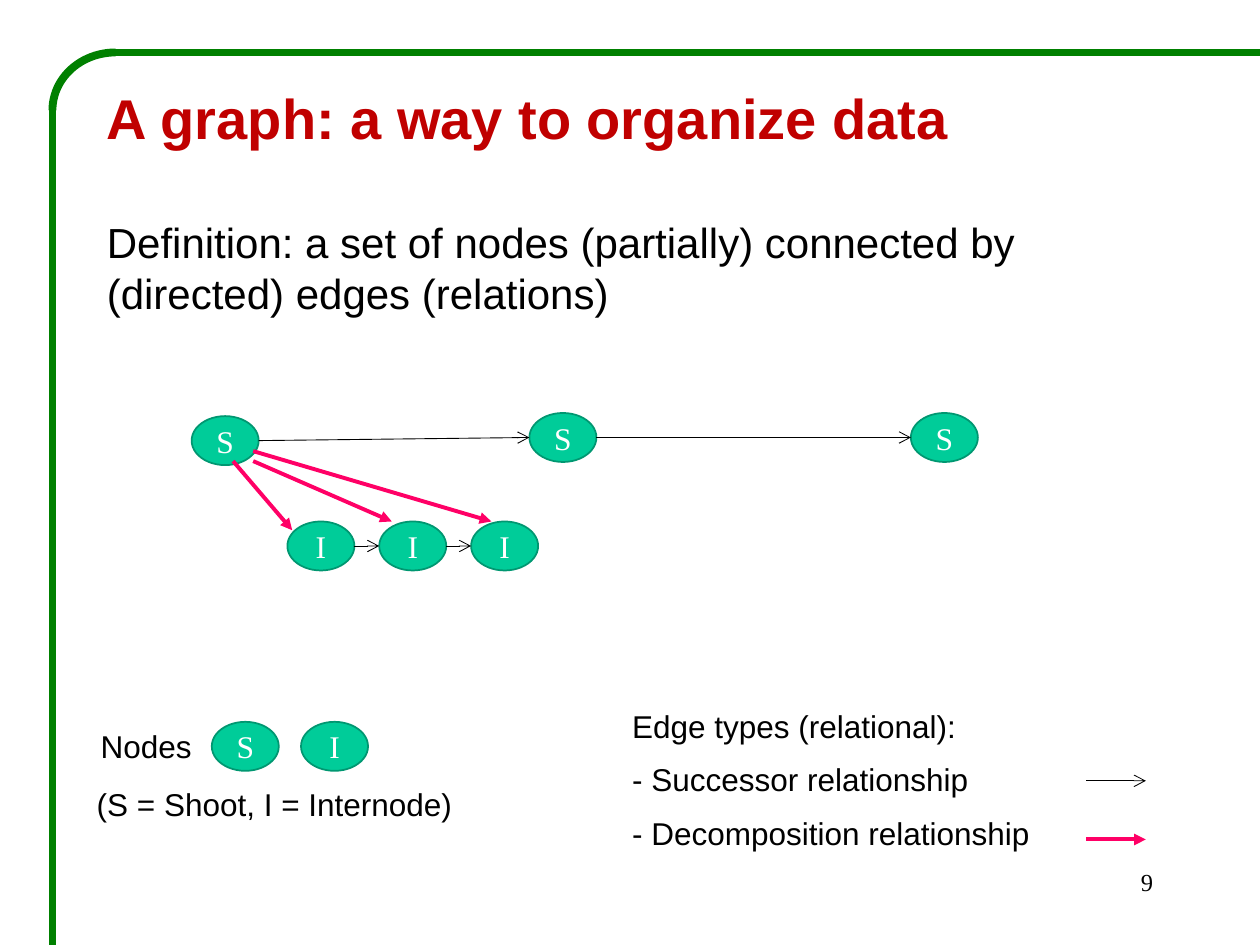
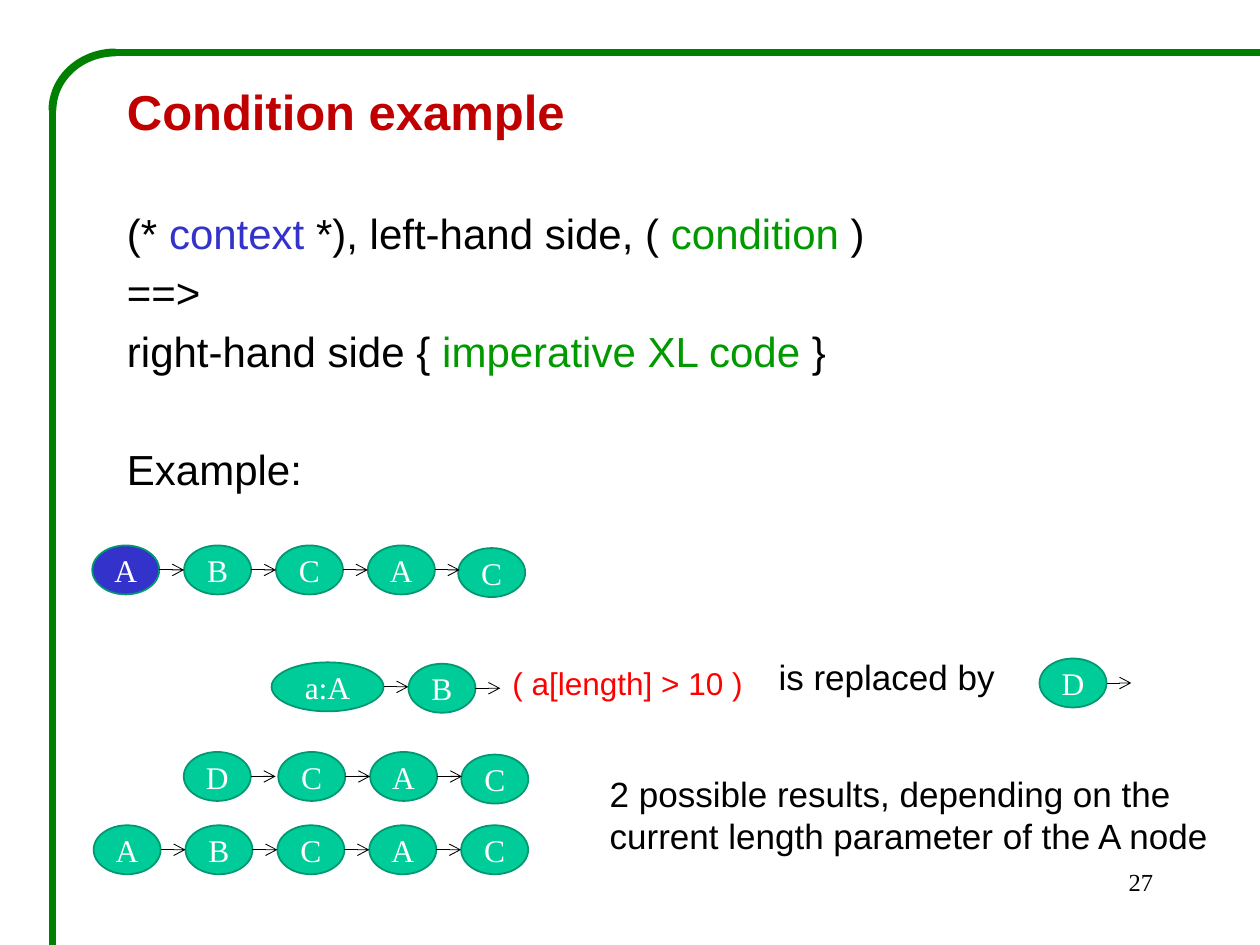
from dataclasses import dataclass
from typing import Optional, Sequence

from lxml.etree import SubElement
from pptx import Presentation
from pptx.dml.color import RGBColor
from pptx.enum.shapes import MSO_CONNECTOR as Link, MSO_SHAPE as Preset
from pptx.enum.text import MSO_ANCHOR as Anchor, PP_ALIGN as Align
from pptx.oxml.ns import qn
from pptx.util import Pt

SLIDE_WIDTH, SLIDE_HEIGHT = 720, 540
SANS, SERIF = "Arial", "Times New Roman"
BLACK, WHITE, RED = "000000", "FFFFFF", "FF0000"
TITLE_RED, FRAME_GREEN, CODE_GREEN = "C00000", "008000", "009900"
NODE_GREEN, NODE_EDGE, CONTEXT_BLUE = "00CC99", "009771", "3333CC"
DECOMPOSITION_PINK = "FF0066"
NODE_WIDTH, NODE_HEIGHT, NODE_PITCH = 38.3, 28, 52.5
ARROW_LENGTH = NODE_PITCH - NODE_WIDTH


@dataclass(frozen=True)
class Run:
    text: str
    size: float = 18
    color: str = BLACK
    bold: bool = False
    font: str = SANS


@dataclass(frozen=True)
class Para:
    runs: Sequence[Run]
    before: float = 0
    align: Align = Align.LEFT


@dataclass(frozen=True)
class Edge:
    color: str
    width: float
    head: Optional[str] = None


@dataclass(frozen=True)
class Node:
    label: str
    left: float
    top: float
    width: float = NODE_WIDTH
    fill: str = NODE_GREEN

    @property
    def entry(self) -> tuple[float, float]:
        return self.left, self.top + NODE_HEIGHT / 2

    @property
    def exit(self) -> tuple[float, float]:
        return self.left + self.width, self.top + NODE_HEIGHT / 2


FRAME = Edge(FRAME_GREEN, 4.5)
SUCCESSOR = Edge(BLACK, 0.5, "arrow")
DECOMPOSITION = Edge(DECOMPOSITION_PINK, 2.25, "triangle")


def rgb(color: str) -> RGBColor:
    return RGBColor.from_string(color)


def write(paragraph, text: str, *, size: float, color: str = BLACK,
          bold: bool = False, font: str = SANS) -> None:
    run = paragraph.add_run()
    run.text = text
    run.font.size = Pt(size)
    run.font.name = font
    run.font.bold = bold
    run.font.color.rgb = rgb(color)


def add_text(slide, left: float, top: float, width: float, height: float,
             paras: Sequence[Para], anchor: Anchor = Anchor.TOP) -> None:
    frame = slide.shapes.add_textbox(Pt(left), Pt(top), Pt(width), Pt(height)).text_frame
    frame.word_wrap = True
    frame.vertical_anchor = anchor
    for index, para in enumerate(paras):
        paragraph = frame.add_paragraph() if index else frame.paragraphs[0]
        paragraph.alignment = para.align
        paragraph.space_before = Pt(para.before)
        for run in para.runs:
            write(paragraph, run.text, size=run.size, color=run.color,
                  bold=run.bold, font=run.font)


def add_edge(slide, start: tuple[float, float], end: tuple[float, float], edge: Edge) -> None:
    connector = slide.shapes.add_connector(Link.STRAIGHT, *map(Pt, (*start, *end)))
    connector.line.color.rgb = rgb(edge.color)
    connector.line.width = Pt(edge.width)
    properties = connector.element.spPr
    if edge.head:
        SubElement(properties.find(qn("a:ln")), qn("a:tailEnd"), type=edge.head)
    SubElement(properties, qn("a:effectLst"))


def add_node(slide, node: Node) -> None:
    oval = slide.shapes.add_shape(Preset.OVAL, Pt(node.left), Pt(node.top),
                                  Pt(node.width), Pt(NODE_HEIGHT))
    oval.shadow.inherit = False
    oval.fill.solid()
    oval.fill.fore_color.rgb = rgb(node.fill)
    oval.line.color.rgb = rgb(NODE_EDGE)
    oval.line.width = Pt(1)
    frame = oval.text_frame
    frame.margin_left = frame.margin_right = frame.margin_top = frame.margin_bottom = 0
    frame.vertical_anchor = Anchor.MIDDLE
    frame.paragraphs[0].alignment = Align.CENTER
    write(frame.paragraphs[0], node.label, size=18, color=WHITE, font=SERIF)


def add_chain(slide, nodes: Sequence[Node], open_end: bool = False) -> None:
    """Draw nodes in a row with a short successor arrow after each, the last only if open_end."""
    for node in nodes:
        add_node(slide, node)
    for node in nodes if open_end else nodes[:-1]:
        x, y = node.exit
        add_edge(slide, (x, y), (x + ARROW_LENGTH, y), SUCCESSOR)


def row(labels: str, left: float, top: float) -> list[Node]:
    return [Node(label, left + i * NODE_PITCH, top) for i, label in enumerate(labels)]


def add_framed_slide(deck, number: int):
    slide = deck.slides.add_slide(deck.slide_layouts[6])
    edge, corner_x, corner_y = 30, 66, 63
    add_edge(slide, (SLIDE_WIDTH, edge), (corner_x, edge), FRAME)
    add_edge(slide, (edge, corner_y - 2), (edge, SLIDE_HEIGHT), FRAME)
    corner = slide.shapes.add_shape(Preset.ARC, Pt(edge), Pt(edge),
                                    Pt(2 * (corner_x - edge)), Pt(2 * (corner_y - edge)))
    corner.adjustments[0], corner.adjustments[1] = 108, 162
    corner.shadow.inherit = False
    corner.fill.background()
    corner.line.color.rgb = rgb(FRAME.color)
    corner.line.width = Pt(FRAME.width)
    add_text(slide, 516, 492, 150, 36,
             [Para([Run(str(number), 14, font=SERIF)], align=Align.RIGHT)])
    return slide


def build_graph_slide(deck) -> None:
    slide = add_framed_slide(deck, 9)
    definition = "Definition: a set of nodes (partially) connected by (directed) edges (relations)"
    add_text(slide, 54, 43.2, 640.8, 142.6, [
        Para([Run("A graph: a way to organize data", 32, TITLE_RED, True)]),
        Para([Run(definition, 24)], before=38),
    ], Anchor.MIDDLE)

    shoots = [Node("S", 109.5, 237.8), Node("S", 302.5, 236), Node("S", 520.5, 236)]
    for shoot in shoots:
        add_node(slide, shoot)
    for shoot, successor in zip(shoots, shoots[1:]):
        add_edge(slide, shoot.exit, successor.entry, SUCCESSOR)
    add_chain(slide, row("III", 164.2, 298))
    for start, end in [((133.2, 263.5), (167, 303)),
                       ((144.7, 263.5), (223.9, 298)),
                       ((144.7, 257.8), (280.8, 298))]:
        add_edge(slide, start, end, DECOMPOSITION)

    add_text(slide, 50.4, 412, 70, 28.8, [Para([Run("Nodes")])])
    for kind in (Node("S", 121, 412.5), Node("I", 172, 412.5)):
        add_node(slide, kind)
    add_text(slide, 48.2, 445, 260.6, 28.8, [Para([Run("(S = Shoot, I = Internode)")])])
    edge_legend = ("Edge types (relational):", "- Successor relationship",
                   "- Decomposition relationship")
    add_text(slide, 354.2, 400.3, 260.6, 94.3,
             [Para([Run(line)], before=9) for line in edge_legend])
    for y, edge in ((446.2, SUCCESSOR), (479.7, DECOMPOSITION)):
        add_edge(slide, (620.6, y), (654.8, y), edge)


def build_condition_slide(deck) -> None:
    slide = add_framed_slide(deck, 27)
    line_gap, section_gap = 4.8, 38.4
    add_text(slide, 65.5, 43.2, 471, 255.6, [
        Para([Run("Condition example", 28, TITLE_RED, True)]),
        Para([Run("(* ", 24), Run("context", 24, CONTEXT_BLUE),
              Run(" *), left-hand side, ( ", 24), Run("condition", 24, CODE_GREEN),
              Run(" )", 24)], section_gap),
        Para([Run("==>", 24)], line_gap),
        Para([Run("right-hand side { ", 24), Run("imperative XL code ", 24, CODE_GREEN),
              Run("}", 24)], line_gap),
        Para([Run("Example:", 24)], section_gap),
    ])

    start_top, result_top = 311.7, 429.7
    add_chain(slide, [Node("A", 52.7, start_top, fill=CONTEXT_BLUE),
                      *row("BCA", 105.2, start_top), Node("C", 261.8, start_top + 1.5)])

    add_chain(slide, [Node("a:A", 155.2, 378.5, width=64), Node("B", 233.4, 379.3)],
              open_end=True)
    add_text(slide, 285.8, 375.8, 155, 28.8, [Para([Run("( a[length] > 10 )", color=RED)])])
    add_text(slide, 437.8, 370.8, 145, 31.7, [Para([Run("is replaced by", 20)])])
    add_chain(slide, [Node("D", 594, 376.3)], open_end=True)

    add_chain(slide, [Node("D", 105, result_top), *row("CA", 159, result_top),
                      Node("C", 263.6, result_top + 1.5)])
    add_chain(slide, row("ABCAC", 53.5, 471.6))
    add_text(slide, 341.3, 437.8, 358.6, 55.4, [Para([Run(
        "2 possible results, depending on the current length parameter of the A node", 20)])])


def main() -> None:
    deck = Presentation()
    deck.slide_width, deck.slide_height = Pt(SLIDE_WIDTH), Pt(SLIDE_HEIGHT)
    build_graph_slide(deck)
    build_condition_slide(deck)
    deck.save("out.pptx")


if __name__ == "__main__":
    main()
